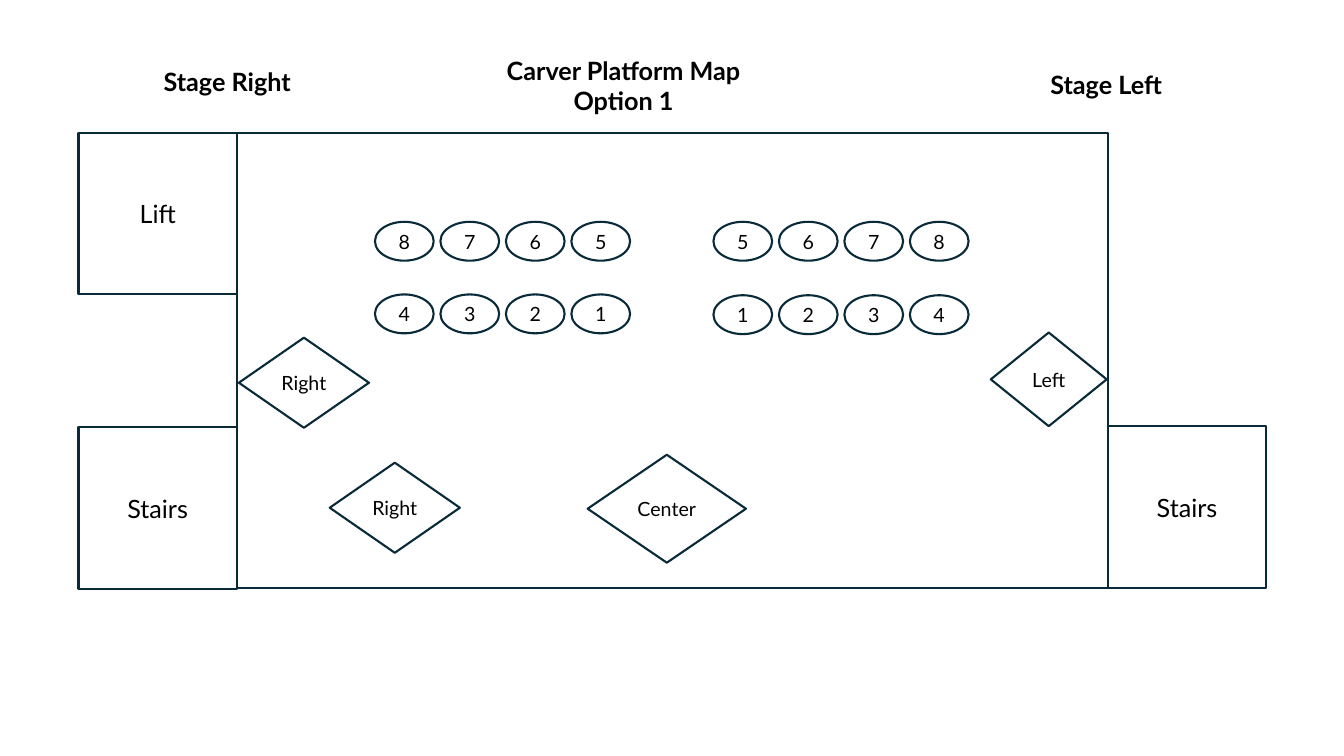
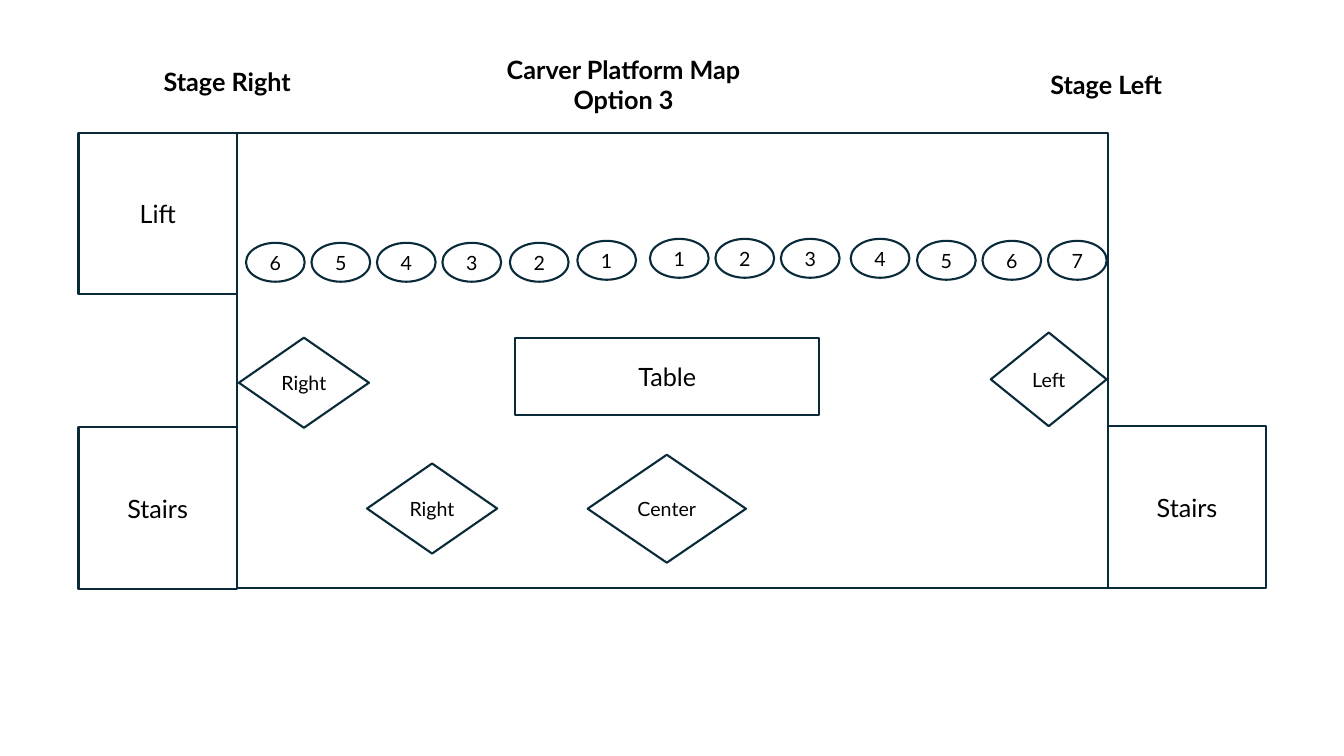
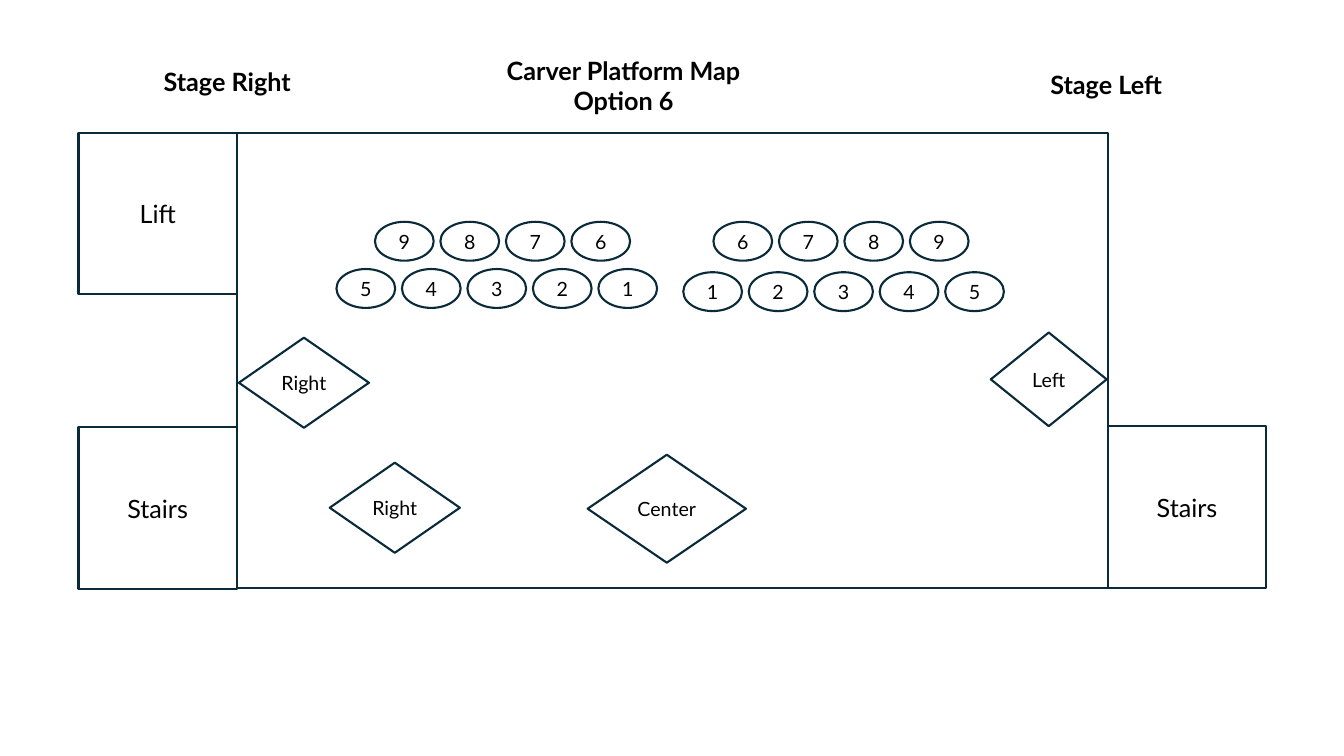
import dataclasses

import pptx
import pptx.dml.color
import pptx.enum.shapes
import pptx.enum.text
import pptx.util

Cm = pptx.util.Cm
SHAPE = pptx.enum.shapes.MSO_SHAPE
ANCHOR = pptx.enum.text.MSO_ANCHOR


@dataclasses.dataclass(frozen=True)
class Theme:
    """Colours, type and line sizes shared by all slides."""
    ink: pptx.dml.color.RGBColor = pptx.dml.color.RGBColor(0, 0, 0)
    outline: pptx.dml.color.RGBColor = pptx.dml.color.RGBColor(0x09, 0x2A, 0x39)
    font: str = "Lato"
    large: pptx.util.Pt = pptx.util.Pt(18)
    small: pptx.util.Pt = pptx.util.Pt(14)
    line: pptx.util.Pt = pptx.util.Pt(1.5)


THEME = Theme()
STAGE = (5.97, 3.35, 21.95, 11.46)
SIDE = (3.99, 4.07)
SEAT = (1.48, 0.98)
SEAT_PITCH = 1.65
HEADING_WIDTH = 9.63

BACK_LEFT, BACK_RIGHT = (3.48, 2.24), (12.01, 2.24)
MAPS = [
    dict(option=1, title_top=1.27, microphone=(2.34, 8.31), table=False,
         rows=[("4321", 3.48, 4.07), ("8765", *BACK_LEFT),
               ("1234", 12.01, 4.09), ("5678", *BACK_RIGHT)]),
    dict(option=3, title_top=1.24, microphone=(3.28, 8.33), table=True,
         rows=[("6543", 0.23, 2.77), ("2", 6.88, 2.77), ("1", 8.58, 2.72),
               ("123", 10.41, 2.67), ("4", 15.47, 2.67), ("567", 17.14, 2.72)]),
    dict(option=6, title_top=1.27, microphone=(2.34, 8.31), table=False,
         rows=[("9876", *BACK_LEFT), ("54321", 2.51, 3.43),
               ("6789", *BACK_RIGHT), ("12345", 11.25, 3.51)]),
]


def write(sp, text, size, bold=False, anchor=ANCHOR.MIDDLE):
    """Write centred text, one paragraph a line, into a shape."""
    tf = sp.text_frame
    tf.text = text
    tf.word_wrap = True
    tf.vertical_anchor = anchor
    for p in tf.paragraphs:
        p.alignment = pptx.enum.text.PP_ALIGN.CENTER
        p.font.name = THEME.font
        p.font.size = size
        p.font.bold = bold
        p.font.color.rgb = THEME.ink


def add_outline(s, kind, box, left, top, width, height, text="", size=THEME.large):
    """Add an unfilled, labelled shape placed relative to a box."""
    sp = s.shapes.add_shape(kind, Cm(box[0] + left), Cm(box[1] + top), Cm(width), Cm(height))
    sp.shadow.inherit = False
    sp.fill.background()
    sp.line.color.rgb = THEME.outline
    sp.line.width = THEME.line
    if text:
        tf = sp.text_frame
        tf.margin_left = tf.margin_right = tf.margin_top = tf.margin_bottom = 0
        write(sp, text, size)
    return sp


def add_headings(s, option, title_top):
    """Place the title and the two stage side labels."""
    title = s.shapes.title
    title.left, title.top = Cm(10.9), Cm(title_top)
    title.width, title.height = Cm(HEADING_WIDTH), Cm(1.8)
    title.text_frame.auto_size = pptx.enum.text.MSO_AUTO_SIZE.NONE
    write(title, f"Carver Platform Map\nOption {option}", THEME.large, True, ANCHOR.TOP)
    for text, left, top in (("Stage Right", 0.91, 1.55), ("Stage Left", 23.06, 1.63)):
        sp = s.shapes.add_textbox(Cm(left), Cm(top), Cm(HEADING_WIDTH), Cm(1.02))
        write(sp, text, THEME.large, True, ANCHOR.TOP)


def add_platform(s, box):
    """Draw the stage with its lift and stairs."""
    width, height = box[2:]
    add_outline(s, SHAPE.RECTANGLE, box, 0, 0, width, height)
    for text, left, top in (("Lift", -SIDE[0], 0), ("Stairs", -SIDE[0], 7.42),
                            ("Stairs", width, height - SIDE[1])):
        add_outline(s, SHAPE.RECTANGLE, box, left, top, *SIDE, text)


def add_microphones(s, box, front_right):
    """Draw the labelled diamonds on the stage."""
    for text, left, top, width, height in (
            ("Right", 0.05, 5.16, 3.28, 2.27),
            ("Right", *front_right, 3.28, 2.27),
            ("Center", 8.84, 8.11, 3.99, 2.72),
            ("Left", 19, 5.03, 2.92, 2.36)):
        add_outline(s, SHAPE.DIAMOND, box, left, top, width, height, text, THEME.small)


def add_seats(s, box, labels, left, top):
    """Draw an evenly spaced row of numbered seats."""
    for i, label in enumerate(labels):
        add_outline(s, SHAPE.OVAL, box, left + i * SEAT_PITCH, top, *SEAT, label, THEME.small)


def add_map(prs, option, title_top, microphone, table, rows):
    """Add one platform map slide."""
    s = prs.slides.add_slide(prs.slide_layouts.get_by_name("Title Only"))
    add_headings(s, option, title_top)
    add_platform(s, STAGE)
    add_microphones(s, STAGE, microphone)
    if table:
        add_outline(s, SHAPE.RECTANGLE, STAGE, 7.01, 5.16, 7.67, 1.96, "Table")
    for row in rows:
        add_seats(s, STAGE, *row)


def main():
    """Build and save the presentation."""
    prs = pptx.Presentation()
    prs.slide_width, prs.slide_height = Cm(33.87), Cm(19.05)
    for platform_map in MAPS:
        add_map(prs, **platform_map)
    prs.save("out.pptx")


if __name__ == "__main__":
    main()
